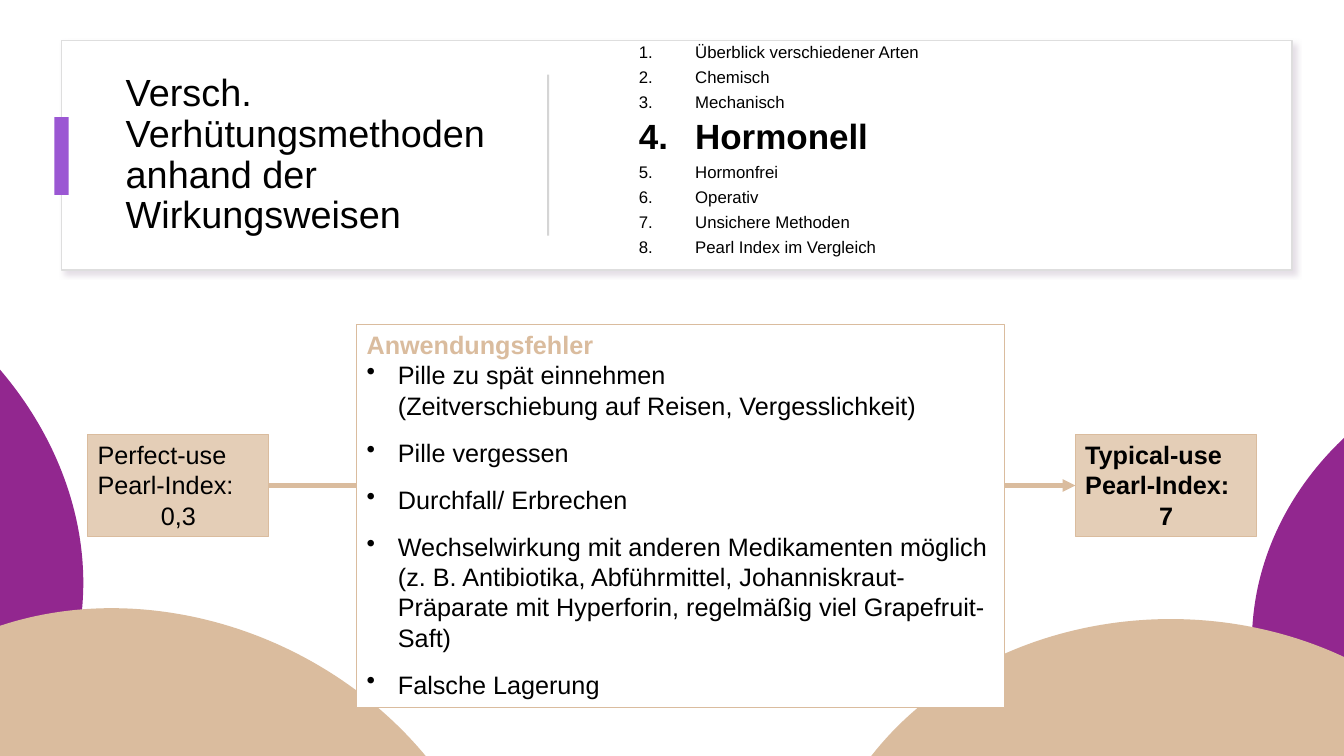
from dataclasses import dataclass

from lxml.etree import SubElement
from pptx import Presentation
from pptx.dml.color import RGBColor
from pptx.enum.shapes import MSO_CONNECTOR, MSO_SHAPE
from pptx.enum.text import MSO_ANCHOR, MSO_AUTO_SIZE, PP_ALIGN
from pptx.oxml.ns import qn
from pptx.shapes.autoshape import Shape
from pptx.shapes.connector import Connector
from pptx.slide import Slide
from pptx.util import Cm, Pt

BLACK = "000000"
WHITE = "FFFFFF"
SAND = "DABC9E"
LIGHT_SAND = "E4CEB7"
PURPLE = "92278F"
ELLIPSE_WIDTH, ELLIPSE_HEIGHT = 18.11, 15.42


@dataclass(frozen=True)
class Area:
    left: float
    top: float
    width: float
    height: float

    def lengths(self) -> list[Cm]:
        return [Cm(value) for value in (self.left, self.top, self.width, self.height)]


@dataclass(frozen=True)
class Block:
    area: Area
    fill: str
    line: str | None = None
    line_width: float = 0.75
    kind: MSO_SHAPE = MSO_SHAPE.RECTANGLE
    rotation: float = 0


@dataclass(frozen=True)
class Line:
    text: str
    size: float = 18
    bold: bool = False
    color: str = BLACK
    align: PP_ALIGN = PP_ALIGN.LEFT
    bullet: tuple[str, str, str] | None = None
    margin: float = 0
    hanging: float = 0
    spacing: float = 1
    before: float = 0
    after: float = 0


def rgb(color: str) -> RGBColor:
    return RGBColor.from_string(color)


def add_block(page: Slide, block: Block) -> Shape:
    shape = page.shapes.add_shape(block.kind, *block.area.lengths())
    shape.rotation = block.rotation
    shape.fill.solid()
    shape.fill.fore_color.rgb = rgb(block.fill)
    if block.line:
        shape.line.color.rgb = rgb(block.line)
        shape.line.width = Pt(block.line_width)
    else:
        shape.line.fill.background()
    shape.shadow.inherit = False
    return shape


def write(box: Shape, lines: list[Line], anchor: MSO_ANCHOR, grow: bool = False) -> None:
    frame = box.text_frame
    frame.word_wrap = True
    frame.vertical_anchor = anchor
    frame.auto_size = MSO_AUTO_SIZE.SHAPE_TO_FIT_TEXT if grow else MSO_AUTO_SIZE.NONE
    for index, line in enumerate(lines):
        para = frame.add_paragraph() if index else frame.paragraphs[0]
        if line.bullet:
            tag, attribute, value = line.bullet
            properties = para._p.get_or_add_pPr()
            properties.set("marL", str(Cm(line.margin)))
            properties.set("indent", str(-Cm(line.hanging)))
            SubElement(properties, qn(tag)).set(attribute, value)
        para.alignment = line.align
        para.line_spacing = line.spacing
        para.space_before = Pt(line.before if index else 0)
        para.space_after = Pt(line.after)
        for number, part in enumerate(line.text.split("\n")):
            if number:
                para.add_line_break()
            span = para.add_run()
            span.text = part
            span.font.name = "Arial"
            span.font.size = Pt(line.size)
            span.font.bold = line.bold
            span.font.color.rgb = rgb(line.color)


def add_soft_shadow(shape: Shape) -> None:
    effects = shape._element.spPr.find(qn("a:effectLst"))
    shadow = SubElement(effects, qn("a:outerShdw"), blurRad=str(Pt(4)),
                        dist=str(Pt(3)), dir="2700000", algn="tl", rotWithShape="0")
    color = SubElement(shadow, qn("a:srgbClr"), val="CABECD")
    SubElement(color, qn("a:alpha"), val="50000")


def add_arrow(page: Slide, start: Shape, end: Shape) -> Connector:
    arrow = page.shapes.add_connector(MSO_CONNECTOR.STRAIGHT, 0, 0, 0, 0)
    arrow.begin_connect(start, 3)
    arrow.end_connect(end, 1)
    arrow.line.color.rgb = rgb(SAND)
    arrow.line.width = Pt(3)
    properties = arrow._element.spPr
    SubElement(properties.find(qn("a:ln")), qn("a:tailEnd"), type="triangle")
    SubElement(properties, qn("a:effectLst"))
    return arrow


def add_header(page: Slide) -> None:
    header = add_block(page, Block(Area(1.55, 1.02, 31.01, 5.79), WHITE, "DEDEDE", 1))
    add_soft_shadow(header)
    title = page.shapes.add_textbox(*Area(2.92, 1.63, 10.16, 4.57).lengths())
    heading = "Versch. Verhütungsmethoden anhand der Wirkungsweisen"
    write(title, [Line(heading, size=27, spacing=0.9)], MSO_ANCHOR.MIDDLE)
    add_block(page, Block(Area(1.37, 2.95, 0.36, 1.96), "9B57D3"))
    add_block(page, Block(Area(13.79, 1.88, 0.05, 4.06), "D5D5D5"))

    current = "Hormonell"
    topics = ["Überblick verschiedener Arten", "Chemisch", "Mechanisch", current,
              "Hormonfrei", "Operativ", "Unsichere Methoden", "Pearl Index im Vergleich"]
    agenda = page.shapes.add_textbox(*Area(14.58, 1.02, 16.97, 5.56).lengths())
    write(agenda, [
        Line(topic, size=25 if topic == current else 12, bold=topic == current,
             bullet=("a:buAutoNum", "type", "arabicPeriod"),
             margin=2.69, hanging=1.42, spacing=0.9, before=5)
        for topic in topics
    ], MSO_ANCHOR.MIDDLE)


def add_index_box(page: Slide, left: float, label: str, value: str, bold: bool) -> Shape:
    box = add_block(page, Block(Area(left, 10.95, 4.57, 2.57), LIGHT_SAND, SAND))
    write(box, [Line(label, bold=bold), Line(value, bold=bold, align=PP_ALIGN.CENTER)],
          MSO_ANCHOR.TOP, grow=True)
    return box


def add_ellipses(page: Slide) -> None:
    for left, top, color, rotation in (
        (31.55, 8.48, PURPLE, 0),
        (20.45, 15.6, SAND, 0),
        (-15.77, 5.97, PURPLE, 25.9),
        (-5.13, 15.6, SAND, 25.9),
    ):
        area = Area(left, top, ELLIPSE_WIDTH, ELLIPSE_HEIGHT)
        add_block(page, Block(area, color, kind=MSO_SHAPE.OVAL, rotation=rotation))


def add_errors(page: Slide) -> None:
    errors = [
        "Pille zu spät einnehmen\n(Zeitverschiebung auf Reisen, Vergesslichkeit)",
        "Pille vergessen",
        "Durchfall/ Erbrechen",
        "Wechselwirkung mit anderen Medikamenten möglich (z. B. Antibiotika, "
        "Abführmittel, Johanniskraut-Präparate mit Hyperforin, "
        "regelmäßig viel Grapefruit-Saft)",
        "Falsche Lagerung",
    ]
    box = add_block(page, Block(Area(8.99, 8.18, 16.33, 9.65), WHITE, SAND))
    bullets = [Line(error, bullet=("a:buChar", "char", "•"),
                    margin=0.79, hanging=0.79, after=12) for error in errors]
    write(box, [Line("Anwendungsfehler", bold=True, color=SAND), *bullets],
          MSO_ANCHOR.TOP, grow=True)


def main() -> None:
    deck = Presentation()
    deck.slide_width, deck.slide_height = Cm(33.87), Cm(19.05)
    page = deck.slides.add_slide(deck.slide_layouts[6])
    add_header(page)
    perfect = add_index_box(page, 2.21, "Perfect-use Pearl-Index:", "0,3", False)
    typical = add_index_box(page, 27.1, "Typical-use Pearl-Index:", "7", True)
    add_arrow(page, perfect, typical)
    add_ellipses(page)
    add_errors(page)
    deck.save("out.pptx")


if __name__ == "__main__":
    main()
